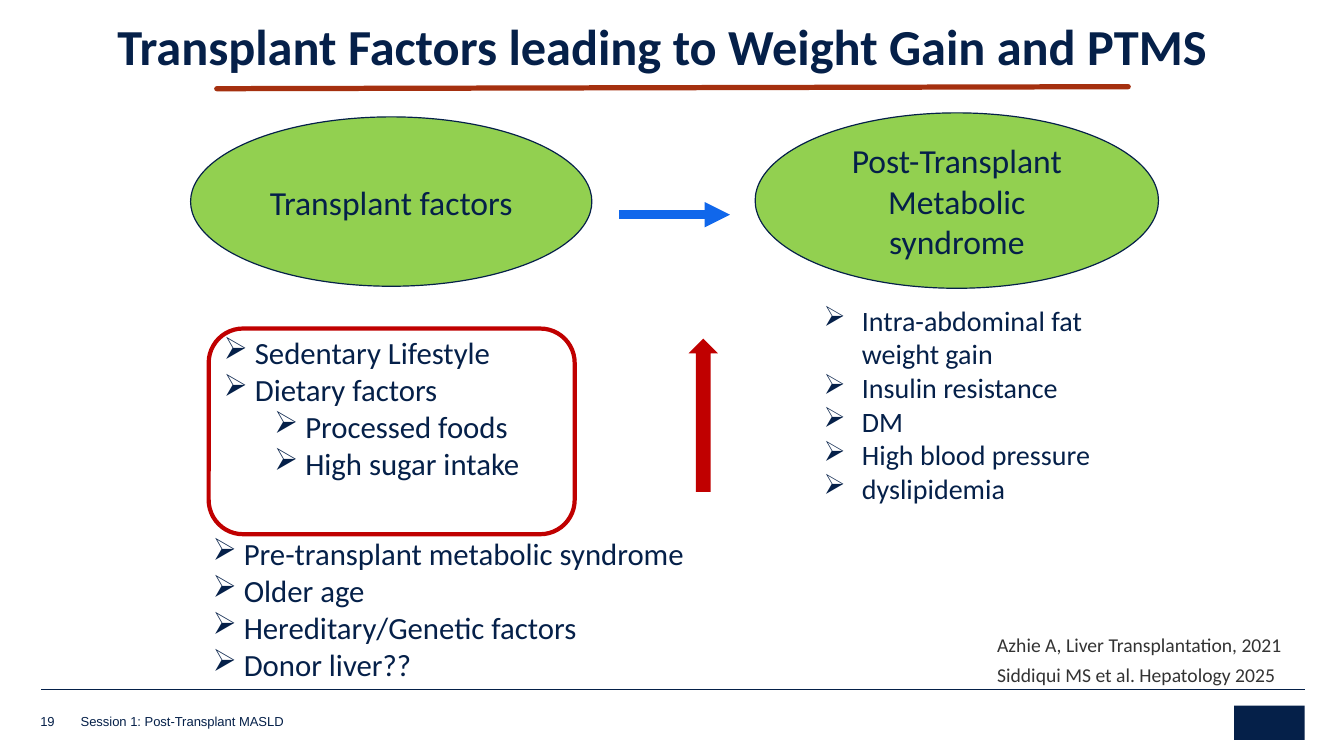
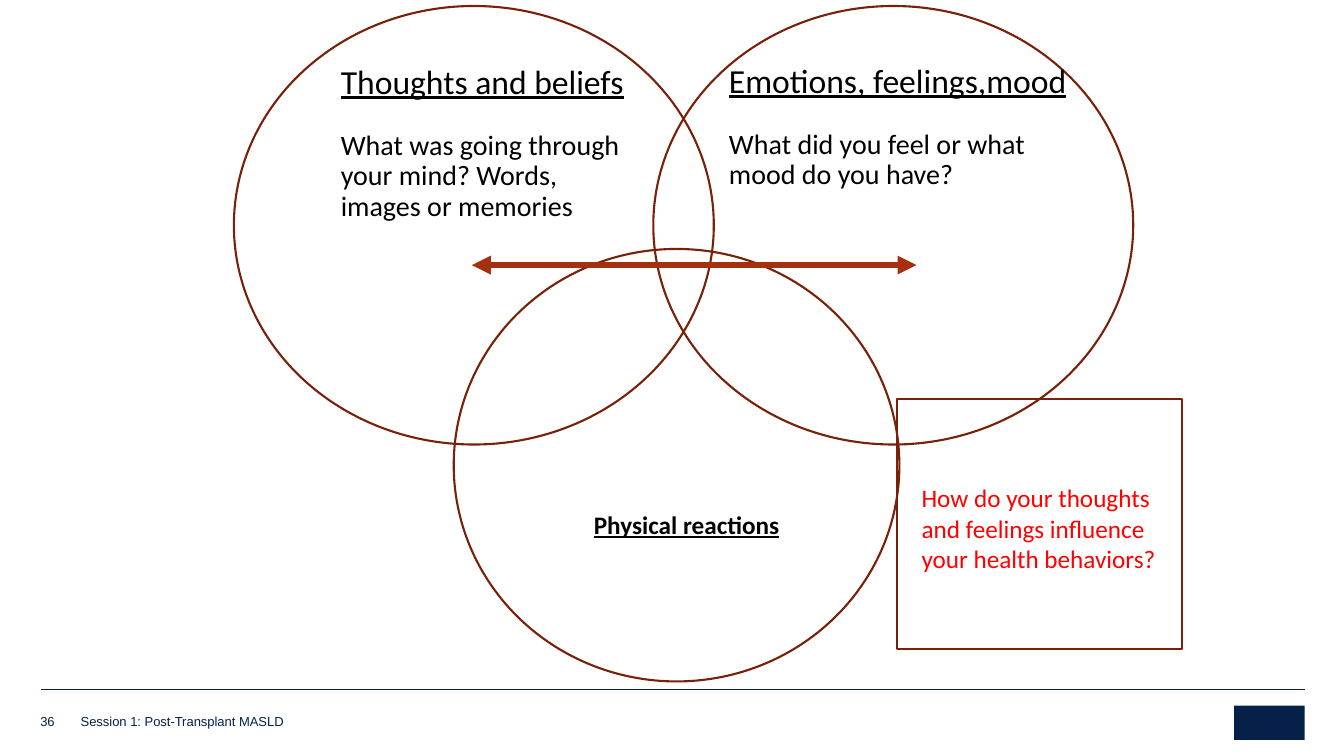
from dataclasses import dataclass
from typing import Optional, Sequence

from lxml.etree import SubElement
from pptx import Presentation
from pptx.dml.color import RGBColor
from pptx.enum.shapes import MSO_CONNECTOR, MSO_SHAPE
from pptx.enum.text import MSO_ANCHOR, MSO_AUTO_SIZE, PP_ALIGN
from pptx.oxml.ns import qn
from pptx.util import Inches, Pt

NAVY, RUST, DARK_RUST = "052049", "A5300F", "782008"
GREEN, CRIMSON, BLUE = "92D050", "C00000", "1067EB"
BLACK, RED, GREY = "000000", "FF0000", "333333"
FOOTER = "Session 1: Post-Transplant MASLD"
PITCH = Pt(21.6)


@dataclass
class Box:
    """Position and size in inches."""
    x: float
    y: float
    w: float
    h: float

    def emu(self) -> tuple:
        """Return the four lengths for python-pptx."""
        return tuple(Inches(v) for v in (self.x, self.y, self.w, self.h))


@dataclass
class Para:
    """One paragraph; unset values come from its text frame."""
    text: str
    size: Optional[float] = None
    underline: bool = False
    indent: float = 0
    before: float = 0


@dataclass
class BulletList:
    """A bulleted list with its hanging indent."""
    box: Box
    size: float
    hang: float
    items: Sequence[Para]


@dataclass
class Topic:
    """A heading with an optional question below it."""
    box: Box
    heading: str
    size: float
    question: str = ""
    bold: bool = False


BULLET_LISTS = [
    BulletList(Box(8.07, 2.96, 3.08, 2.12), 20, 0.38, [
        Para("Intra-abdominal fat weight gain"),
        Para("Insulin resistance"),
        Para("DM"),
        Para("High blood pressure"),
        Para("dyslipidemia"),
    ]),
    BulletList(Box(2.12, 3.26, 3.5, 1.58), 22, 0.31, [
        Para("Sedentary Lifestyle"),
        Para("Dietary factors"),
        Para("Processed foods", indent=0.5),
        Para("High sugar intake", indent=0.5),
    ]),
    BulletList(Box(2.01, 5.26, 6.25, 1.58), 22, 0.31, [
        Para("Pre-transplant metabolic syndrome"),
        Para("Older age"),
        Para("Hereditary/Genetic factors"),
        Para("Donor liver??"),
    ]),
]

OVALS = [
    (Box(7.49, 1.12, 4, 1.74), ["Post-Transplant", "Metabolic", "syndrome"]),
    (Box(1.89, 1.16, 3.98, 1.68), ["Transplant factors"]),
]

CIRCLES = [
    Box(2.32, 0.06, 4.76, 4.35),
    Box(6.48, 0.06, 4.76, 4.35),
    Box(4.5, 2.47, 4.42, 4.29),
]

TOPICS = [
    Topic(Box(7.23, 0.69, 3.62, 1.24), "Emotions, feelings,mood", 24,
          "What did you feel or what mood do you have?"),
    Topic(Box(3.38, 0.7, 2.95, 1.54), "Thoughts and beliefs", 24,
          "What was going through your mind? Words, images or memories"),
    Topic(Box(5.89, 5.05, 1.97, 0.3), "Physical reactions", 18, bold=True),
]


def rgb(color: str) -> RGBColor:
    """Turn a hex string into a colour."""
    return RGBColor.from_string(color)


def write(tf, paras: Sequence[Para], *, size: float, color: str = NAVY,
          font: str = "Calibri", bold: bool = False, align=PP_ALIGN.LEFT,
          anchor=MSO_ANCHOR.TOP, inset: tuple = (0.1, 0.05), hang: float = 0,
          spacing=None, after: float = 0) -> None:
    """Fill a text frame with formatted paragraphs."""
    tf.word_wrap = True
    tf.auto_size = MSO_AUTO_SIZE.NONE
    tf.vertical_anchor = anchor
    tf.margin_left = tf.margin_right = Inches(inset[0])
    tf.margin_top = tf.margin_bottom = Inches(inset[1])
    for i, para in enumerate(paras):
        p = tf.paragraphs[0] if i == 0 else tf.add_paragraph()
        p.alignment = align
        p.space_before, p.space_after = Pt(para.before), Pt(after)
        if spacing:
            p.line_spacing = spacing
        if hang:
            pPr = p._p.get_or_add_pPr()
            pPr.set("marL", str(Inches(hang + para.indent)))
            pPr.set("indent", str(-Inches(hang)))
            SubElement(pPr, qn("a:buChar")).set("char", "➢")
        r = p.add_run()
        r.text = para.text
        r.font.name, r.font.size = font, Pt(para.size or size)
        r.font.bold, r.font.underline = bold, para.underline
        r.font.color.rgb = rgb(color)


def add_text(s, box: Box, paras: Sequence[Para], **fmt) -> None:
    """Add a text box."""
    write(s.shapes.add_textbox(*box.emu()).text_frame, paras, **fmt)


def add_shape(s, kind, box: Box, *, fill: str = "", line: str = "",
              width: float = 1):
    """Add a preset shape, unfilled and unlined unless told otherwise."""
    sp = s.shapes.add_shape(kind, *box.emu())
    sp.shadow.inherit = False
    if fill:
        sp.fill.solid()
        sp.fill.fore_color.rgb = rgb(fill)
    else:
        sp.fill.background()
    if line:
        sp.line.color.rgb = rgb(line)
        sp.line.width = Pt(width)
    else:
        sp.line.fill.background()
    return sp


def add_line(s, start: tuple, end: tuple, color: str, width: float,
             ends: Sequence[str] = (), cap: str = "flat") -> None:
    """Add a straight line with optional arrowheads."""
    points = [Inches(v) for v in (*start, *end)]
    cxn = s.shapes.add_connector(MSO_CONNECTOR.STRAIGHT, *points)
    cxn.line.color.rgb = rgb(color)
    cxn.line.width = Pt(width)
    ln = cxn.line._get_or_add_ln()
    ln.set("cap", cap)
    for end_tag in ends:
        SubElement(ln, qn(f"a:{end_tag}")).set("type", "triangle")
    SubElement(cxn._element.spPr, qn("a:effectLst"))


def add_footer(s, number: int) -> None:
    """Add the rule, session name, slide number and corner mark."""
    add_line(s, (0.41, 6.84), (12.94, 6.84), NAVY, 0.25)
    add_shape(s, MSO_SHAPE.RECTANGLE, Box(12.24, 7, 0.7, 0.34), fill=NAVY)
    for box, text in ((Box(0.8, 7.08, 6.29, 0.15), FOOTER),
                      (Box(0.4, 7.06, 0.36, 0.17), str(number))):
        add_text(s, box, [Para(text)], size=9.3, font="Arial",
                 anchor=MSO_ANCHOR.BOTTOM, inset=(0, 0))


def add_title(s, text: str) -> None:
    """Place and format the title placeholder and underline it."""
    title = s.shapes.title
    title.left, title.top, title.width, title.height = Box(
        0.84, 0.19, 11.46, 1.78).emu()
    write(title.text_frame, [Para(text)], size=36, bold=True,
          align=PP_ALIGN.CENTER, spacing=0.85)
    add_line(s, (2.15, 0.88), (11.19, 0.86), RUST, 3.75, cap="rnd")


def build_factors(prs) -> None:
    """Build the slide on transplant factors."""
    s = prs.slides.add_slide(prs.slide_layouts[5])
    add_footer(s, 19)
    add_title(s, "Transplant Factors leading to Weight Gain and PTMS")
    for box, lines in OVALS:
        sp = add_shape(s, MSO_SHAPE.OVAL, box, fill=GREEN, line=NAVY, width=0.85)
        write(sp.text_frame, [Para(t) for t in lines], size=24,
              align=PP_ALIGN.CENTER, anchor=MSO_ANCHOR.MIDDLE)
    add_line(s, (6.14, 2.13), (7.24, 2.13), BLUE, 6, ["tailEnd"])
    add_shape(s, MSO_SHAPE.ROUNDED_RECTANGLE, Box(2.07, 3.26, 3.63, 2.04),
              line=CRIMSON, width=3)
    for group in BULLET_LISTS:
        add_text(s, group.box, group.items, size=group.size, hang=group.hang)
    add_shape(s, MSO_SHAPE.UP_ARROW, Box(6.83, 3.36, 0.29, 1.52), fill=CRIMSON)
    add_text(s, Box(9.74, 6.38, 3.5, 0.33),
             [Para("Azhie A, Liver Transplantation, 2021"),
              Para("Siddiqui MS et al. Hepatology 2025")],
             size=14, color=GREY, anchor=MSO_ANCHOR.MIDDLE,
             inset=(0.15, 0), after=4.5)


def build_thoughts(prs) -> None:
    """Build the slide of overlapping circles."""
    s = prs.slides.add_slide(prs.slide_layouts[6])
    add_footer(s, 36)
    for box in CIRCLES:
        add_shape(s, MSO_SHAPE.OVAL, box, line=DARK_RUST, width=1.5)
    for topic in TOPICS:
        paras = [Para(topic.heading, underline=True)]
        if topic.question:
            paras.append(Para(topic.question, size=20, before=PITCH.pt))
        add_text(s, topic.box, paras, size=topic.size, color=BLACK,
                 bold=topic.bold, inset=(0, 0), spacing=PITCH)
    add_shape(s, MSO_SHAPE.RECTANGLE, Box(8.9, 3.96, 2.82, 2.48),
              line=DARK_RUST, width=1.5)
    add_text(s, Box(9.09, 4.74, 2.6, 1.19),
             [Para("How do your thoughts and feelings influence your health behaviors?")],
             size=18, color=RED, inset=(0.05, 0.05), spacing=PITCH)
    add_line(s, (4.68, 2.63), (9.09, 2.63), RUST, 4.5, ["headEnd", "tailEnd"])


def main() -> None:
    """Build and save the presentation."""
    prs = Presentation()
    prs.slide_width, prs.slide_height = Inches(13.33), Inches(7.5)
    build_factors(prs)
    build_thoughts(prs)
    prs.save("out.pptx")


if __name__ == "__main__":
    main()
